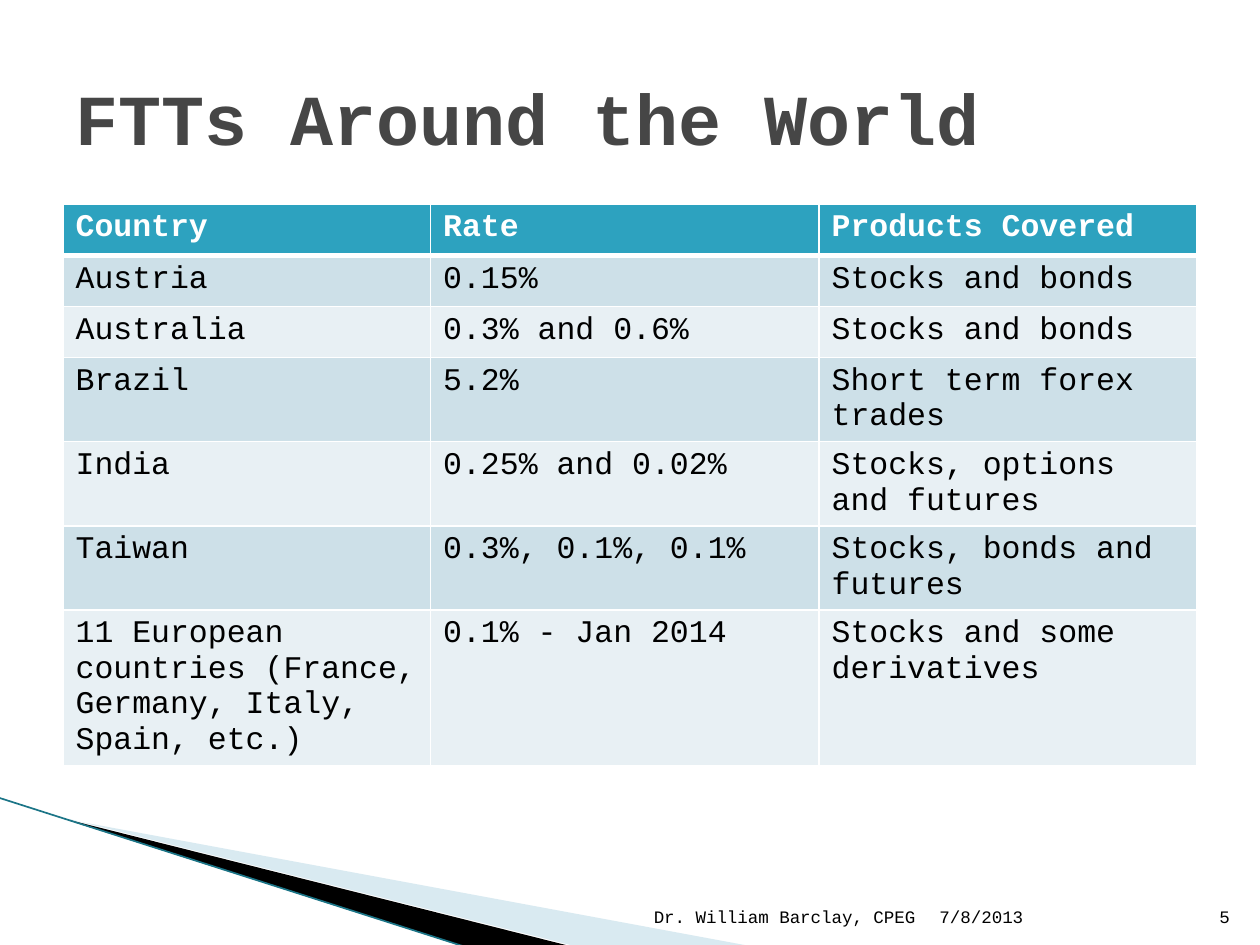
from lxml import etree
from pptx import Presentation
from pptx import util as u
from pptx.dml.color import RGBColor
from pptx.enum import shapes, text
from pptx.oxml import parse_xml
from pptx.oxml.ns import nsdecls, qn

FONT = "Courier New"
LEFT, MIDDLE, BOTTOM = text.PP_ALIGN.LEFT, text.MSO_ANCHOR.MIDDLE, text.MSO_ANCHOR.BOTTOM


def rgb(code):
    return RGBColor.from_string(code)


def write(frame, content, size=18, color="000000", bold=False, align=LEFT, anchor=None):
    frame.text = content
    frame.word_wrap = True
    if anchor is not None:
        frame.vertical_anchor = anchor
    paragraph = frame.paragraphs[0]
    paragraph.alignment = align
    font = paragraph.runs[0].font
    font.name, font.size, font.bold = FONT, u.Pt(size), bold
    font.color.rgb = rgb(color)


deck = Presentation()
deck.slide_width, deck.slide_height = u.Cm(25.4), u.Cm(19.05)
slide = deck.slides.add_slide(deck.slide_layouts[5])

# Corner wedges: colour, opacity in percent, frame in cm, outline on a 5760 x 528 grid
GRID_WIDTH, GRID_HEIGHT = 5760, 528
wedges = [
    ("A0CBDC", 40, (1.99, 13.89, 10.56, 4.01),
     [(-329, 347), (7156, 682), (5229, 682), (-328, 345)]),
    ("000000", 100, (-0.15, 16.09, 10.56, 2.33),
     [(817, 97), (6408, 682), (5232, 685), (829, 101)]),
]
for color, opacity, frame, outline in wedges:
    builder = slide.shapes.build_freeform(*outline[0])
    builder.add_line_segments(outline[1:], close=True)
    wedge = builder.convert_to_shape()
    wedge.left, wedge.top, wedge.width, wedge.height = map(u.Cm, frame)
    # The outline reaches beyond its frame, so the grid is set apart from its bounds
    grid = next(wedge._element.iter(qn("a:path")))
    grid.set("w", str(GRID_WIDTH))
    grid.set("h", str(GRID_HEIGHT))
    for point, (x, y) in zip(grid.iter(qn("a:pt")), outline):
        point.set("x", str(x))
        point.set("y", str(y))
    wedge.shadow.inherit = False
    wedge.line.fill.background()
    wedge.fill.solid()
    wedge.fill.fore_color.rgb = rgb(color)
    if opacity < 100:
        tint = wedge.fill._xPr.find(".//" + qn("a:srgbClr"))
        etree.SubElement(tint, qn("a:alpha")).set("val", str(opacity * 1000))

# Thin edge along the wedges
edge = slide.shapes.add_connector(
    shapes.MSO_CONNECTOR.STRAIGHT, u.Cm(-0.03), u.Cm(16.08), u.Cm(9.42), u.Cm(19.1))
edge.line.color.rgb = rgb("1B7587")
edge.line.width = u.Pt(0.95)
etree.SubElement(edge._element.spPr, qn("a:effectLst"))

# Title
title = slide.shapes.title
title.left, title.top, title.width, title.height = u.Cm(1.27), u.Cm(0.76), u.Cm(22.86), u.Cm(3.18)
write(title.text_frame, "FTTs Around the World", size=41, color="464646", bold=True, anchor=MIDDLE)

# Table of transaction taxes
taxes = [
    ("Country", "Rate", "Products Covered"),
    ("Austria", "0.15%", "Stocks and bonds"),
    ("Australia", "0.3% and 0.6%", "Stocks and bonds"),
    ("Brazil", "5.2%", "Short term forex trades"),
    ("India", "0.25% and 0.02%", "Stocks, options and futures"),
    ("Taiwan", "0.3%, 0.1%, 0.1%", "Stocks, bonds and futures"),
    ("11 European countries (France, Germany, Italy, Spain, etc.)",
     "0.1% - Jan 2014", "Stocks and some derivatives"),
]
column_widths = [7.41, 7.83, 7.62]
row_heights = [1.03] * 3 + [1.69] * 3 + [3.13]
table = slide.shapes.add_table(
    len(taxes), len(column_widths), u.Cm(1.27), u.Cm(4.12),
    u.Cm(sum(column_widths)), u.Cm(sum(row_heights))).table
for column, width in zip(table.columns, column_widths):
    column.width = u.Cm(width)
for r, (entries, height) in enumerate(zip(taxes, row_heights)):
    header = r == 0
    table.rows[r].height = u.Cm(height)
    for c, entry in enumerate(entries):
        cell = table.cell(r, c)
        write(cell.text_frame, entry, color="FFFFFF" if header else "000000", bold=header)
        # White rules, heavier at the foot of the header; the row below adds no top rule
        for side in ("lnL", "lnR", "lnT", "lnB"):
            if r == 1 and side == "lnT":
                continue
            width = u.Pt(3 if header and side == "lnB" else 1)
            cell._tc.get_or_add_tcPr().append(parse_xml(
                f'<a:{side} {nsdecls("a")} w="{width}"><a:solidFill>'
                f'<a:srgbClr val="FFFFFF"/></a:solidFill></a:{side}>'))
        cell.fill.solid()
        cell.fill.fore_color.rgb = rgb("2DA2BF" if header else ("E8F0F4", "CDE0E8")[r % 2])

# Footer: author, date, page number
footer = [
    ("Dr. William Barclay, CPEG", 12.17, 6.53, text.PP_ALIGN.RIGHT),
    ("7/8/2013", 18.69, 5.33, LEFT),
    ("5", 24.02, 1.02, text.PP_ALIGN.RIGHT),
]
for content, left, width, align in footer:
    note = slide.shapes.add_textbox(u.Cm(left), u.Cm(17.79), u.Cm(width), u.Cm(1.02))
    write(note.text_frame, content, size=10, align=align, anchor=BOTTOM)

deck.save("out.pptx")
